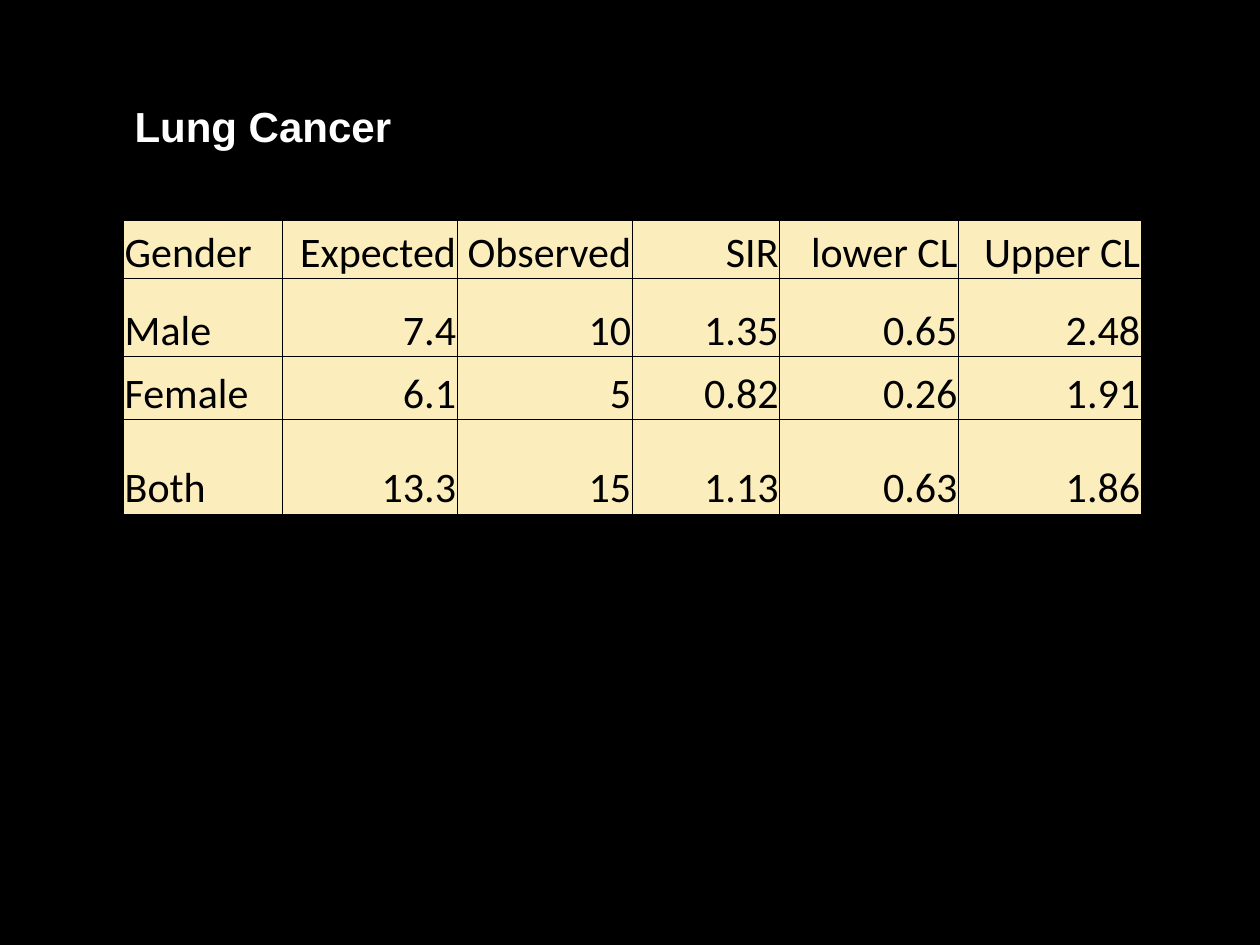
from dataclasses import dataclass

from lxml.etree import SubElement
from pptx import Presentation
from pptx.dml.color import RGBColor as RGB
from pptx.enum.text import MSO_ANCHOR as ANCHOR, MSO_AUTO_SIZE as AUTO, PP_ALIGN as ALIGN
from pptx.oxml.ns import qn
from pptx.util import Inches, Pt


@dataclass(frozen=True)
class Theme:
    black: RGB = RGB(0x00, 0x00, 0x00)
    white: RGB = RGB(0xFF, 0xFF, 0xFF)
    cream: RGB = RGB(0xFC, 0xEE, 0xBC)
    size: int = 24
    border: float = 0.5
    title_font: str = "Arial"
    table_font: str = "Calibri"


THEME = Theme()

COL_WIDTHS = [1.26, 1.39, 1.39, 1.17, 1.42, 1.45]
ROW_HEIGHTS = [0.46, 0.62, 0.5, 0.75]
RESULTS = [
    ["Gender", "Expected", "Observed", "SIR", "lower CL", "Upper CL"],
    ["Male", "7.4", "10", "1.35", "0.65", "2.48"],
    ["Female", "6.1", "5", "0.82", "0.26", "1.91"],
    ["Both", "13.3", "15", "1.13", "0.63", "1.86"],
]


def write(tf, text, font, color, bold=False, align=ALIGN.LEFT):
    p = tf.paragraphs[0]
    p.alignment = align
    r = p.add_run()
    r.text = text
    r.font.name = font
    r.font.size = Pt(THEME.size)
    r.font.bold = bold
    r.font.color.rgb = color


def add_borders(cell):
    """Draw a thin line on all four sides; lines must precede the fill in tcPr."""
    tc_pr = cell._tc.get_or_add_tcPr()
    for side in ("a:lnL", "a:lnR", "a:lnT", "a:lnB"):
        ln = SubElement(tc_pr, qn(side), w=str(Pt(THEME.border)))
        fill = SubElement(ln, qn("a:solidFill"))
        SubElement(fill, qn("a:srgbClr"), val=str(THEME.black))


def add_title(s, text, left, top, width, height):
    box = s.shapes.add_textbox(Inches(left), Inches(top), Inches(width), Inches(height))
    tf = box.text_frame
    tf.word_wrap = True
    tf.auto_size = AUTO.SHAPE_TO_FIT_TEXT
    write(tf, text, THEME.title_font, THEME.white, bold=True)


def add_results(s, left, top):
    table = s.shapes.add_table(
        len(RESULTS), len(COL_WIDTHS), Inches(left), Inches(top),
        Inches(sum(COL_WIDTHS)), Inches(sum(ROW_HEIGHTS))).table
    table.first_row = table.horz_banding = False
    for col, width in zip(table.columns, COL_WIDTHS):
        col.width = Inches(width)
    for row, height, values in zip(table.rows, ROW_HEIGHTS, RESULTS):
        row.height = Inches(height)
        for i, (cell, value) in enumerate(zip(row.cells, values)):
            cell.margin_left = cell.margin_right = cell.margin_top = Inches(0.01)
            cell.margin_bottom = 0
            cell.vertical_anchor = ANCHOR.BOTTOM
            add_borders(cell)
            cell.fill.solid()
            cell.fill.fore_color.rgb = THEME.cream
            write(cell.text_frame, value, THEME.table_font, THEME.black,
                  align=ALIGN.RIGHT if i else ALIGN.LEFT)


def main():
    prs = Presentation()
    prs.slide_width, prs.slide_height = Inches(10), Inches(7.5)
    s = prs.slides.add_slide(prs.slide_layouts[6])
    s.background.fill.solid()
    s.background.fill.fore_color.rgb = THEME.black
    add_results(s, 0.98, 1.75)
    add_title(s, "Lung Cancer", 0.97, 0.75, 2.53, 0.51)
    prs.save("out.pptx")


if __name__ == "__main__":
    main()
